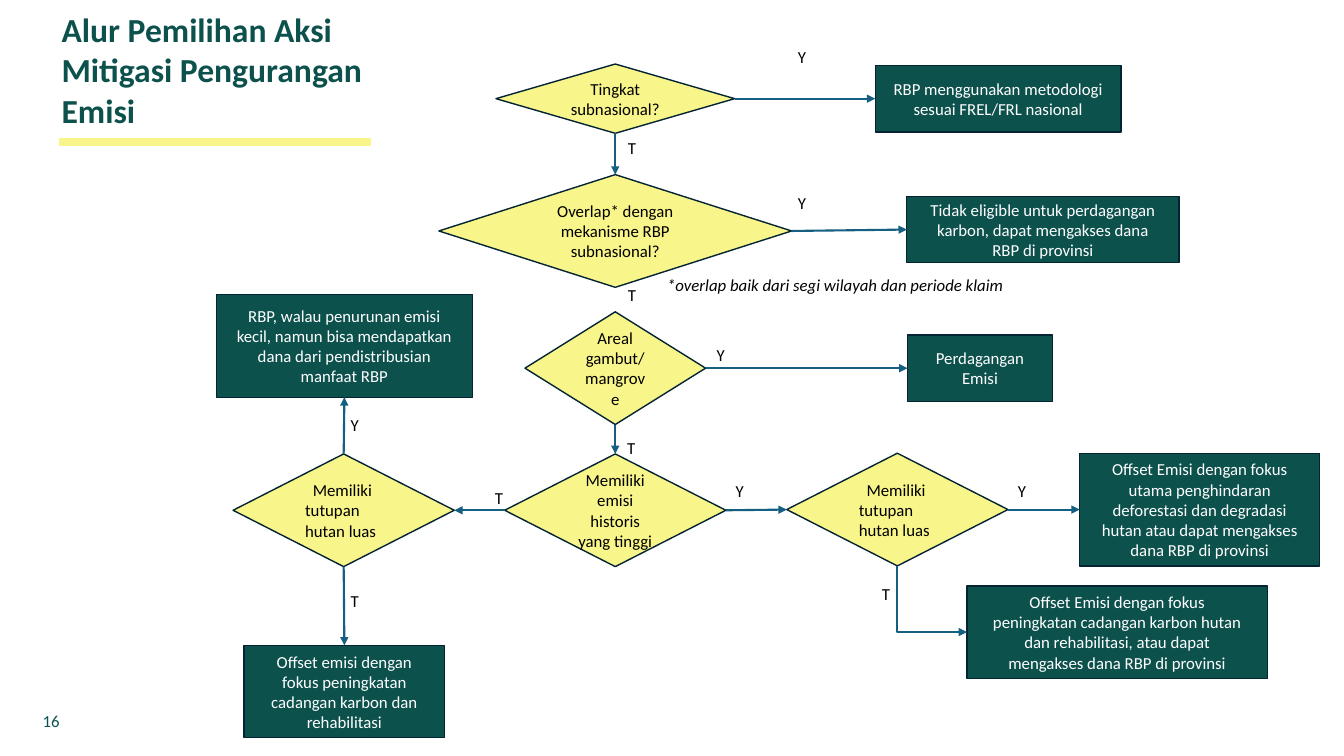
from pptx import Presentation
from pptx.dml.color import RGBColor
from pptx.enum.shapes import MSO_CONNECTOR, MSO_SHAPE
from pptx.enum.text import MSO_ANCHOR, PP_ALIGN
from pptx.oxml.ns import qn
from pptx.util import Pt
from lxml.etree import SubElement

GREEN = RGBColor(0x0D, 0x51, 0x4D)
YELLOW = RGBColor(0xF8, 0xF5, 0x8B)
NAVY = RGBColor(0x04, 0x23, 0x33)
BLUE = RGBColor(0x15, 0x5F, 0x82)
BLACK = RGBColor(0, 0, 0)
WHITE = RGBColor(255, 255, 255)
TOP, LEFT, BOTTOM, RIGHT = range(4)


def write(shape, text, color, size=12, align=PP_ALIGN.LEFT, anchor=MSO_ANCHOR.TOP):
    frame = shape.text_frame
    frame.margin_left = frame.margin_right = frame.margin_top = frame.margin_bottom = 0
    frame.word_wrap = True
    frame.vertical_anchor = anchor
    para = frame.paragraphs[0]
    para.text = text
    para.alignment = align
    para.font.name = "Calibri"
    para.font.size = Pt(size)
    para.font.color.rgb = color
    return para


def arrow(shape):
    shape.line.color.rgb = BLUE
    shape.line.width = Pt(1.5)
    SubElement(shape.line._get_or_add_ln(), qn("a:tailEnd"), type="triangle")
    SubElement(shape._element.spPr, qn("a:effectLst"))


deck = Presentation()
deck.slide_width, deck.slide_height = Pt(960), Pt(540)
slide = deck.slides.add_slide(deck.slide_layouts[6])
shapes = slide.shapes

title = shapes.add_textbox(Pt(44), Pt(6.5), Pt(226), Pt(88))
write(title, "Alur Pemilihan Aksi\vMitigasi Pengurangan\vEmisi", GREEN, 24).font.bold = True
rule = shapes.add_connector(MSO_CONNECTOR.STRAIGHT, Pt(42.5), Pt(101.5), Pt(265), Pt(101.5))
rule.line.color.rgb = YELLOW
rule.line.width = Pt(6)
SubElement(rule._element.spPr, qn("a:effectLst"))
write(shapes.add_textbox(Pt(30.5), Pt(508), Pt(16), Pt(17)), "16", GREEN)

GATE, BOX = (MSO_SHAPE.DIAMOND, YELLOW, BLACK), (MSO_SHAPE.RECTANGLE, GREEN, WHITE)
steps = [
    ("level", GATE, 439.5, 70.5, 170.5, 49.5, "Tingkat\vsubnasional?"),
    ("overlap", GATE, 439.5, 165, 252, 80.5, "Overlap* dengan\vmekanisme RBP\vsubnasional?"),
    ("peat", GATE, 439.5, 263, 129, 80.5, "Areal\vgambut/\vmangrov\ve"),
    ("past", GATE, 439.5, 364.5, 158, 80.5, "Memiliki\vemisi\vhistoris\vyang tinggi"),
    ("west", GATE, 245.5, 364.5, 158, 80.5, "Memiliki\vtutupan\vhutan luas"),
    ("east", GATE, 641, 364, 158, 80.5, "Memiliki\vtutupan\vhutan luas"),
    ("nation", BOX, 713, 70.5, 175.5, 47.5, "RBP menggunakan metodologi\vsesuai FREL/FRL nasional"),
    ("fund", BOX, 745, 164, 194.5, 47.5,
     "Tidak eligible untuk perdagangan\vkarbon, dapat mengakses dana\vRBP di provinsi"),
    ("trade", BOX, 700, 263, 103.5, 47.5, "Perdagangan\vEmisi"),
    ("share", BOX, 246, 247, 183, 73.5,
     "RBP, walau penurunan emisi\vkecil, namun bisa mendapatkan\vdana dari pendistribusian\vmanfaat RBP"),
    ("stock", BOX, 246, 494, 143.5, 66,
     "Offset emisi dengan\vfokus peningkatan\vcadangan karbon dan\vrehabilitasi"),
    ("avoid", BOX, 857, 364, 171.5, 80.5,
     "Offset Emisi dengan fokus\vutama penghindaran\vdeforestasi dan degradasi\v"
     "hutan atau dapat mengakses\vdana RBP di provinsi"),
    ("renew", BOX, 798, 451.5, 214.5, 66,
     "Offset Emisi dengan fokus\vpeningkatan cadangan karbon hutan\v"
     "dan rehabilitasi, atau dapat\vmengakses dana RBP di provinsi"),
]
nodes = {}
for name, (kind, fill, ink), x, y, w, h, text in steps:
    node = shapes.add_shape(kind, Pt(x - w / 2), Pt(y - h / 2), Pt(w), Pt(h))
    node.shadow.inherit = False
    node.fill.solid()
    node.fill.fore_color.rgb = fill
    node.line.color.rgb = NAVY
    node.line.width = Pt(1)
    para = write(node, text, ink, align=PP_ALIGN.CENTER, anchor=MSO_ANCHOR.MIDDLE)
    if name in ("west", "east"):
        para.alignment = PP_ALIGN.LEFT
        para._p.get_or_add_pPr().set("indent", str(Pt(5.5)))
        node.text_frame.margin_left = Pt(12)
    nodes[name] = node

links = [
    ("level", RIGHT, "nation", LEFT), ("level", BOTTOM, "overlap", TOP),
    ("overlap", RIGHT, "fund", LEFT), ("peat", RIGHT, "trade", LEFT),
    ("peat", BOTTOM, "past", TOP), ("past", LEFT, "west", RIGHT),
    ("past", RIGHT, "east", LEFT), ("west", TOP, "share", BOTTOM),
    ("west", BOTTOM, "stock", TOP), ("east", RIGHT, "avoid", LEFT),
]
for start, out, end, into in links:
    link = shapes.add_connector(MSO_CONNECTOR.STRAIGHT, 0, 0, 0, 0)
    link.begin_connect(nodes[start], out)
    link.end_connect(nodes[end], into)
    arrow(link)

east, renew = nodes["east"], nodes["renew"]
mid, low = east.left + east.width // 2, renew.top + renew.height // 2
path = shapes.build_freeform(mid, east.top + east.height)
path.add_line_segments([(mid, low), (renew.left, low)], close=False)
bend = path.convert_to_shape()
bend.fill.background()
arrow(bend)

marks = {
    "Y": [(570, 32), (570, 136), (512, 245), (525.5, 342), (250.5, 295), (727, 342)],
    "T": [(448.5, 97), (448.5, 202), (448, 311), (353.5, 347), (250.5, 420.5), (630, 415.5)],
}
for mark, spots in marks.items():
    for x, y in spots:
        write(shapes.add_textbox(Pt(x), Pt(y + 1.5), Pt(9), Pt(16)), mark, BLACK)

note = shapes.add_textbox(Pt(476.5), Pt(196), Pt(252), Pt(16))
write(note, "*overlap baik dari segi wilayah dan periode klaim", BLACK).font.italic = True

deck.save("out.pptx")
